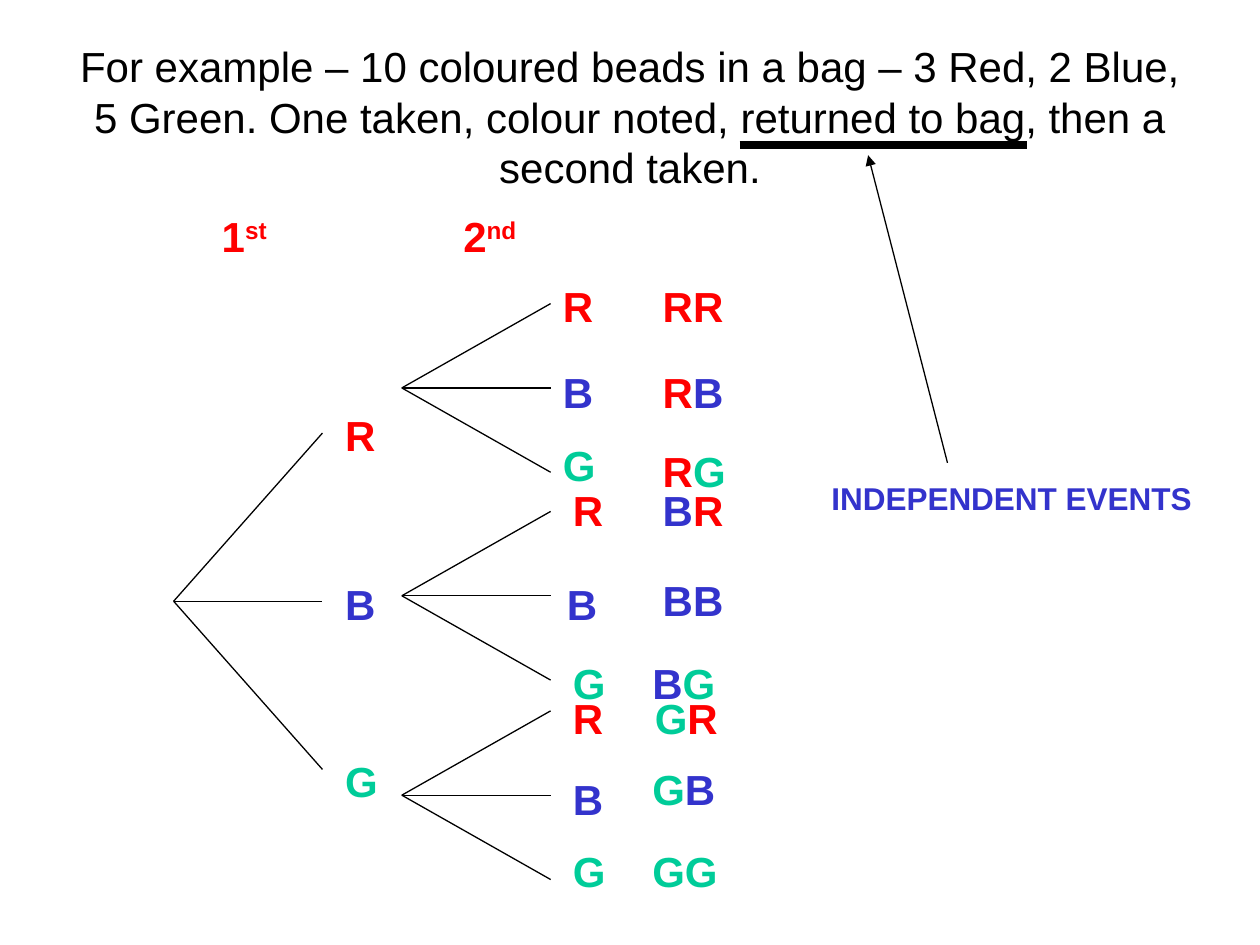
from collections import namedtuple

from lxml.etree import SubElement
from pptx import Presentation
from pptx.dml.color import RGBColor
from pptx.enum.text import MSO_ANCHOR, MSO_AUTO_SIZE, PP_ALIGN
from pptx.oxml.ns import qn
from pptx.util import Cm, Pt

Box = namedtuple("Box", "left top width height")
Branch = namedtuple("Branch", "first box letters pairs")

BLACK, RED, BLUE, GREEN = "000000", "FF0000", "3333CC", "00CC99"
BEAD_COLOURS = {"R": RED, "B": BLUE, "G": GREEN}
LETTER_WIDTHS = {"R": 0.61, "B": 0.61, "G": 0.66}
SIDE_INSETS = 0.51
LABEL_HEIGHT = 1.27

FIRST_LABELS = {"R": (3.21, -0.6), "B": (3.21, 2.8), "G": (3.21, 6.38)}
BRANCHES = [
    Branch("R", Box(8.1, 6.12, 3, 3.4),
           [(3, -0.58), (3, 1.14), (3, 2.62)],
           [(5.01, -0.58), (5.01, 1.14), (5.01, 2.74)]),
    Branch("B", Box(8.1, 10.31, 3, 3.4),
           [(3.2, -0.66), (3.08, 1.22), (3.2, 2.82)],
           [(5.01, -0.66), (5.01, 1.15), (4.8, 2.82)]),
    Branch("G", Box(8.1, 14.33, 3, 3.4),
           [(3.2, -0.49), (3.2, 1.14), (3.2, 2.59)],
           [(4.85, -0.49), (4.8, 0.94), (4.8, 2.59)]),
]


def colour(value):
    return RGBColor.from_string(value)


def add_text(page, box, spans, size=24, bold=True):
    shape = page.shapes.add_textbox(*(Cm(length) for length in box))
    frame = shape.text_frame
    frame.word_wrap = False
    frame.auto_size = MSO_AUTO_SIZE.SHAPE_TO_FIT_TEXT
    para = frame.paragraphs[0]
    para.font.name = "Arial"
    para.font.size = Pt(size)
    para.font.bold = bold
    for text, value in spans:
        span = para.add_run()
        span.text = text
        span.font.color.rgb = colour(value)
    return frame


def add_line(shapes, start, end, weight=0.75, arrow=False):
    points = [Cm(length) for length in (*start, *end)]
    line = shapes.add_connector(1, *points)
    line.line.color.rgb = colour(BLACK)
    line.line.width = Pt(weight)
    if arrow:
        SubElement(line.line._get_or_add_ln(), qn("a:tailEnd"), type="triangle")
    SubElement(line._element.spPr, qn("a:effectLst"))


def add_title(page, box):
    text = ("For example – 10 coloured beads in a bag – 3 Red, 2 Blue, "
            "5 Green. One taken, colour noted, returned to bag, then a second taken.")
    frame = add_text(page, box, [(text, BLACK)], bold=False)
    frame.word_wrap = True
    frame.auto_size = MSO_AUTO_SIZE.NONE
    frame.vertical_anchor = MSO_ANCHOR.MIDDLE
    frame.paragraphs[0].alignment = PP_ALIGN.CENTER
    underline = box.top + 2.16
    add_line(page.shapes, (box.left + 13.64, underline),
             (box.left + 19.43, underline), weight=4.5)


def add_heading(page, box, number, suffix):
    frame = add_text(page, box, [(number, RED), (suffix, RED)])
    raised = frame.paragraphs[0].runs[1]
    raised._r.get_or_add_rPr().set("baseline", "30000")


def add_fan(page, box):
    group = page.shapes.add_group_shape()
    root = (box.left, box.top + box.height / 2)
    for step in range(3):
        tip = (box.left + box.width, box.top + box.height * step / 2)
        add_line(group.shapes, root, tip)


def add_beads(page, box, beads, offset):
    width = SIDE_INSETS + sum(LETTER_WIDTHS[bead] for bead in beads)
    label = Box(box.left + offset[0], box.top + offset[1], width, LABEL_HEIGHT)
    add_text(page, label, [(bead, BEAD_COLOURS[bead]) for bead in beads])


def add_first_draw(page, box):
    add_fan(page, box)
    for bead, offset in FIRST_LABELS.items():
        add_beads(page, box, bead, offset)


def add_second_draw(page, branch):
    add_fan(page, branch.box)
    for second, letter, pair in zip("RBG", branch.letters, branch.pairs):
        add_beads(page, branch.box, second, letter)
        add_beads(page, branch.box, branch.first + second, pair)


def add_callout(page, box):
    add_text(page, box, [("INDEPENDENT EVENTS", BLUE)], size=18)
    add_line(page.shapes, (box.left + 2.59, box.top - 0.2),
             (box.left + 0.99, box.top - 6.4), arrow=True)


def main():
    deck = Presentation()
    deck.slide_width, deck.slide_height = Cm(25.4), Cm(19.05)
    page = deck.slides.add_slide(deck.slide_layouts[6])
    add_title(page, Box(1.27, 0.76, 22.86, 3.18))
    add_heading(page, Box(4.22, 4.11, 1.5, LABEL_HEIGHT), "1", "st")
    add_heading(page, Box(9.09, 4.11, 1.9, LABEL_HEIGHT), "2", "nd")
    add_first_draw(page, Box(3.5, 8.73, 3, 6.78))
    for branch in BRANCHES:
        add_second_draw(page, branch)
    add_callout(page, Box(16.51, 9.53, 7.77, 1.02))
    deck.save("out.pptx")


if __name__ == "__main__":
    main()
